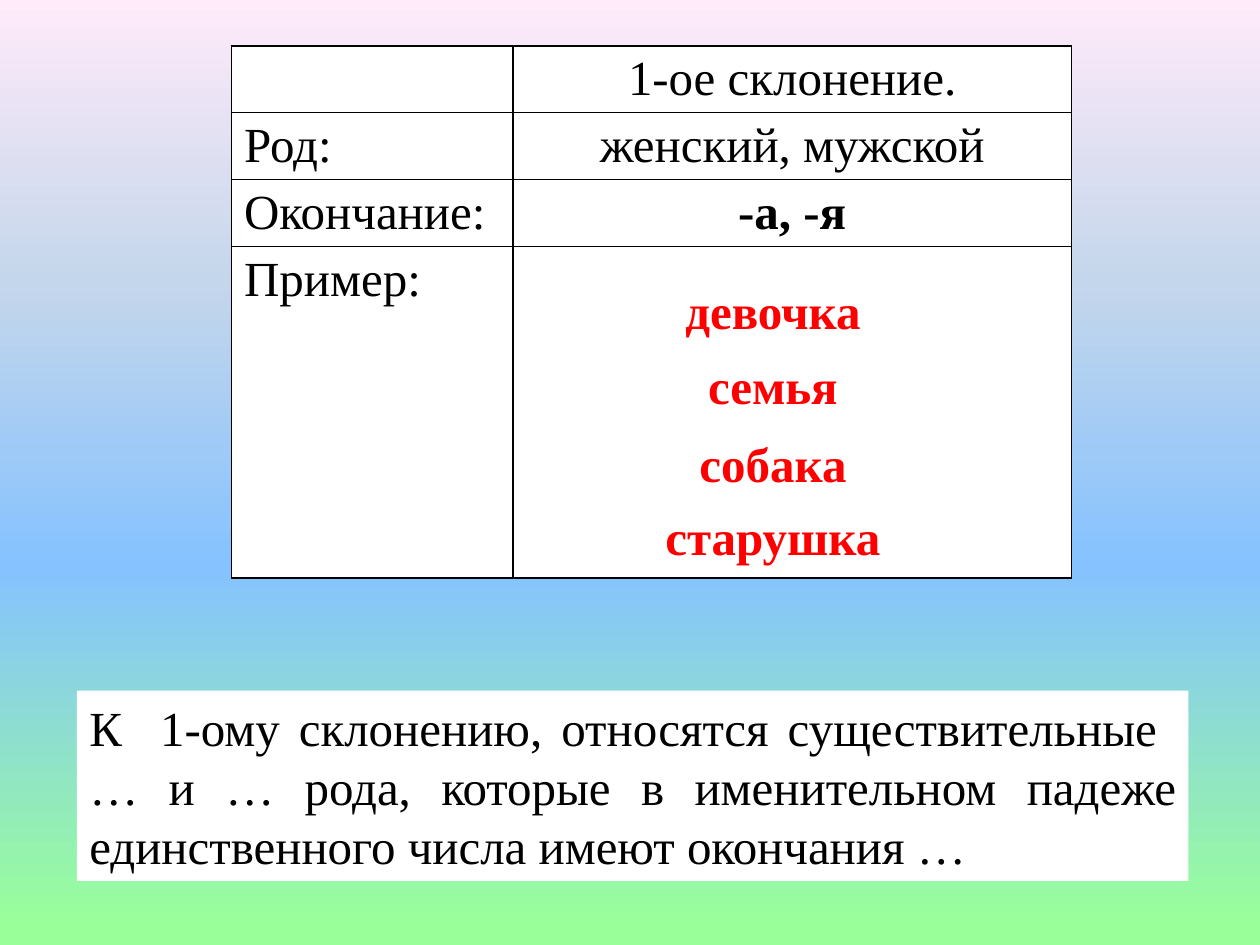
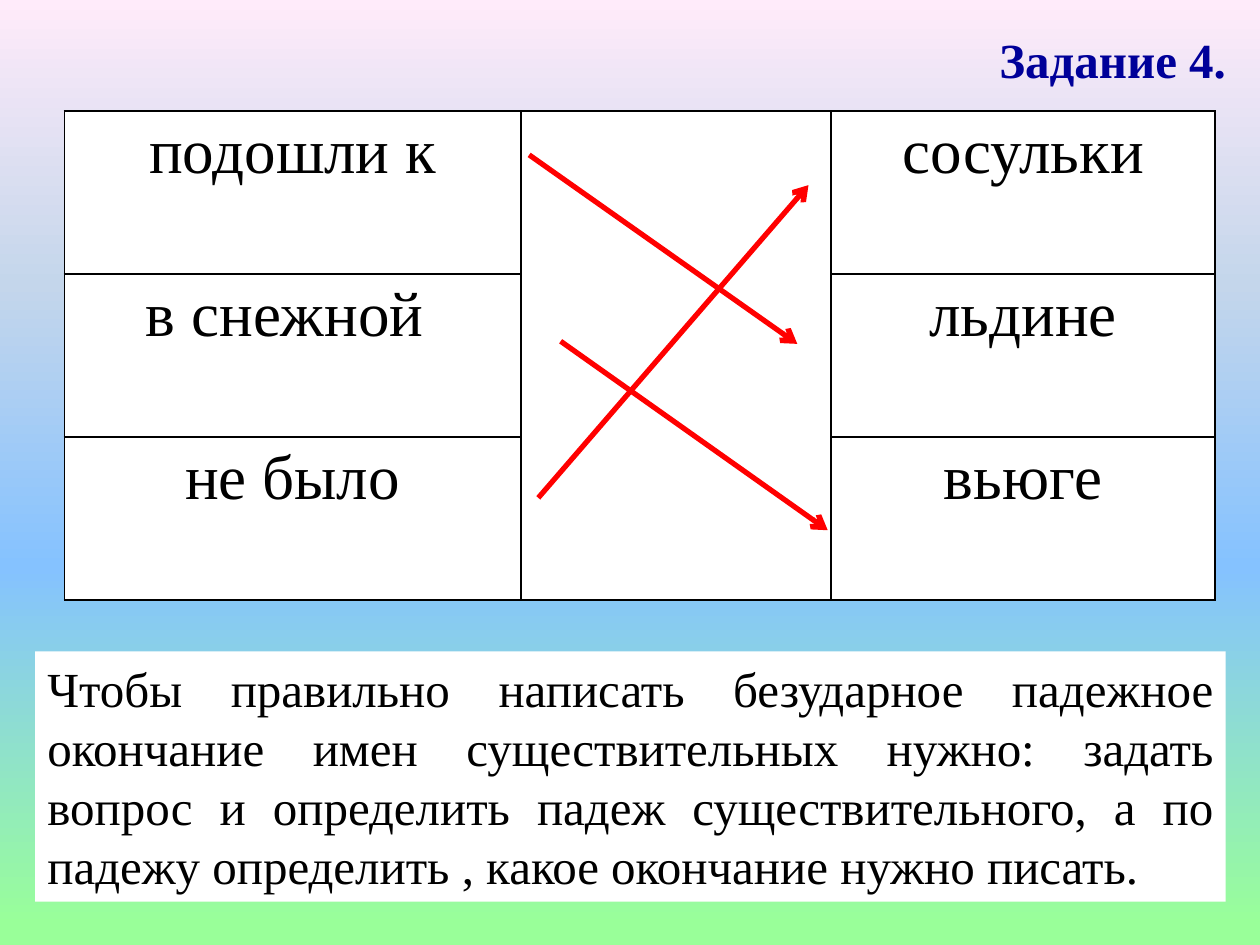
from dataclasses import dataclass

from lxml import etree
from pptx import Presentation
from pptx.dml.color import RGBColor
from pptx.enum.shapes import MSO_CONNECTOR, MSO_SHAPE
from pptx.enum.text import MSO_ANCHOR, MSO_AUTO_SIZE, PP_ALIGN
from pptx.oxml import parse_xml
from pptx.oxml.ns import nsdecls, qn
from pptx.util import Pt

LEFT, CENTER, JUSTIFY = PP_ALIGN.LEFT, PP_ALIGN.CENTER, PP_ALIGN.JUSTIFY
MIDDLE = MSO_ANCHOR.MIDDLE
GROW = MSO_AUTO_SIZE.SHAPE_TO_FIT_TEXT
RECTANGLE = MSO_SHAPE.RECTANGLE
STRAIGHT = MSO_CONNECTOR.STRAIGHT


@dataclass(frozen=True)
class Theme:
    font: str = "Times New Roman"
    body: int = 28
    large: int = 36
    ink: str = "000000"
    paper: str = "FFFFFF"
    accent: str = "FF0000"
    heading: str = "000099"
    border: int = 1
    arrow: int = 3
    sky: tuple = ((2, "99FF99"), (40, "85C2FF"), (70, "C4D6EB"), (100, "FFEBFA"))


def rgb(value):
    return RGBColor.from_string(value)


def solid_line(tag, color, width):
    return parse_xml(
        f'<a:{tag} {nsdecls("a")} w="{Pt(width)}"><a:solidFill>'
        f'<a:srgbClr val="{color}"/></a:solidFill></a:{tag}>')


def write(frame, text, *, font, size, color, bold=False, align=LEFT, outline=None):
    paragraph = frame.paragraphs[0]
    paragraph.alignment = align
    run = paragraph.add_run()
    run.text = text
    run.font.name = font
    run.font.size = Pt(size)
    run.font.bold = bold
    run.font.color.rgb = rgb(color)
    if outline:
        run.font._element.insert(0, solid_line("ln", outline, 1))


class Deck:
    def __init__(self, theme):
        self.theme = theme
        self.file = Presentation()
        self.file.slide_width, self.file.slide_height = Pt(720), Pt(540)
        self.slide = None

    def new_slide(self):
        self.slide = self.file.slides.add_slide(self.file.slide_layouts[6])
        fill = self.slide.background.fill
        fill.gradient()
        fill.gradient_angle = 90
        stops = fill._fill._gradFill.find(qn("a:gsLst"))
        for stop in list(stops):
            stops.remove(stop)
        for percent, color in self.theme.sky:
            stop = etree.SubElement(stops, qn("a:gs"), pos=str(percent * 1000))
            etree.SubElement(stop, qn("a:srgbClr"), val=color)

    def style(self, **changes):
        return dict(font=self.theme.font, size=self.theme.body,
                    color=self.theme.ink) | changes

    def label(self, text, left, top, width, **changes):
        box = self.slide.shapes.add_textbox(Pt(left), Pt(top), Pt(width), Pt(41))
        box.text_frame.word_wrap = False
        box.text_frame.auto_size = GROW
        write(box.text_frame, text, **self.style(bold=True, **changes))

    def rule_panel(self, text, left, top, width, height):
        """White panel that states the grammar rule."""
        panel = self.slide.shapes.add_shape(
            RECTANGLE, Pt(left), Pt(top), Pt(width), Pt(height))
        panel.shadow.inherit = False
        panel.fill.solid()
        panel.fill.fore_color.rgb = rgb(self.theme.paper)
        panel.line.fill.background()
        frame = panel.text_frame
        frame.word_wrap = True
        frame.auto_size = GROW
        frame.vertical_anchor = MIDDLE
        write(frame, text, **self.style(align=JUSTIFY))

    def table(self, rows, left, top, widths, heights, cell_format):
        """cell_format(row, column) gives the text format of one cell."""
        table = self.slide.shapes.add_table(
            len(rows), len(widths), Pt(left), Pt(top),
            Pt(sum(widths)), Pt(sum(heights))).table
        table.first_row = table.horz_banding = False
        for column, width in zip(table.columns, widths):
            column.width = Pt(width)
        for r, (texts, height) in enumerate(zip(rows, heights)):
            table.rows[r].height = Pt(height)
            for c, text in enumerate(texts):
                cell = table.cell(r, c)
                cell.fill.solid()
                cell.fill.fore_color.rgb = rgb(self.theme.paper)
                for place, side in enumerate("LRTB"):
                    cell._tc.tcPr.insert(place, solid_line(
                        f"ln{side}", self.theme.ink, self.theme.border))
                if text:
                    write(cell.text_frame, text, **self.style(**cell_format(r, c)))
        return table

    def arrow(self, start, end):
        arrow = self.slide.shapes.add_connector(
            STRAIGHT, *(Pt(value) for value in (*start, *end)))
        arrow.line.color.rgb = rgb(self.theme.accent)
        arrow.line.width = Pt(self.theme.arrow)
        etree.SubElement(arrow.line._ln, qn("a:tailEnd"), type="arrow")
        etree.SubElement(arrow._element.spPr, qn("a:effectLst"))


def first_declension(deck):
    deck.new_slide()
    rows = [("", "1-ое склонение."),
            ("Род:", "женский, мужской"),
            ("Окончание:", "-а, -я"),
            ("Пример:", "")]
    deck.table(rows, 132.3, 26.2, (160.8, 319.2), (38.2, 38.2, 38.2, 189.4),
               lambda r, c: dict(align=CENTER if c else LEFT, bold=(r, c) == (2, 1)))

    examples_center = 441.7
    red = deck.theme.accent
    for example, top, width in (("девочка", 157, 115), ("семья", 199.5, 89),
                                ("собака", 244.2, 99), ("старушка", 285.8, 139)):
        deck.label(example, examples_center - width / 2, top, width,
                   color=red, outline=red, align=CENTER)

    deck.rule_panel(
        "К  1-ому склонению, относятся существительные  … и … рода, которые "
        "в именительном падеже единственного числа имеют окончания …",
        44, 394.6, 635.2, 108.7)


def task_four(deck):
    deck.new_slide()
    deck.label("Задание 4.", 564, 13.2, 145.4, color=deck.theme.heading)

    rows = [("подошли к", "", "сосульки"),
            ("в снежной ", "", "льдине"),
            ("не было", "", "вьюге")]
    pairs = deck.table(rows, 36.8, 63.4, (260.8, 177.4, 219.4), (93.2,) * 3,
                       lambda r, c: dict(align=CENTER, size=deck.theme.large))
    pairs.cell(0, 1).merge(pairs.cell(2, 1))

    for start, end in (((302.4, 88.5), (455.6, 196.5)),
                       ((320.4, 195), (473, 303)),
                       ((307.6, 284.5), (462, 105.8))):
        deck.arrow(start, end)

    deck.rule_panel(
        "Чтобы правильно написать безударное падежное окончание имен "
        "существительных нужно: задать вопрос и определить падеж существительного, "
        "а по падежу определить , какое окончание нужно писать.",
        20, 372.2, 680.4, 143)


def main():
    deck = Deck(Theme())
    first_declension(deck)
    task_four(deck)
    deck.file.save("out.pptx")


if __name__ == "__main__":
    main()
